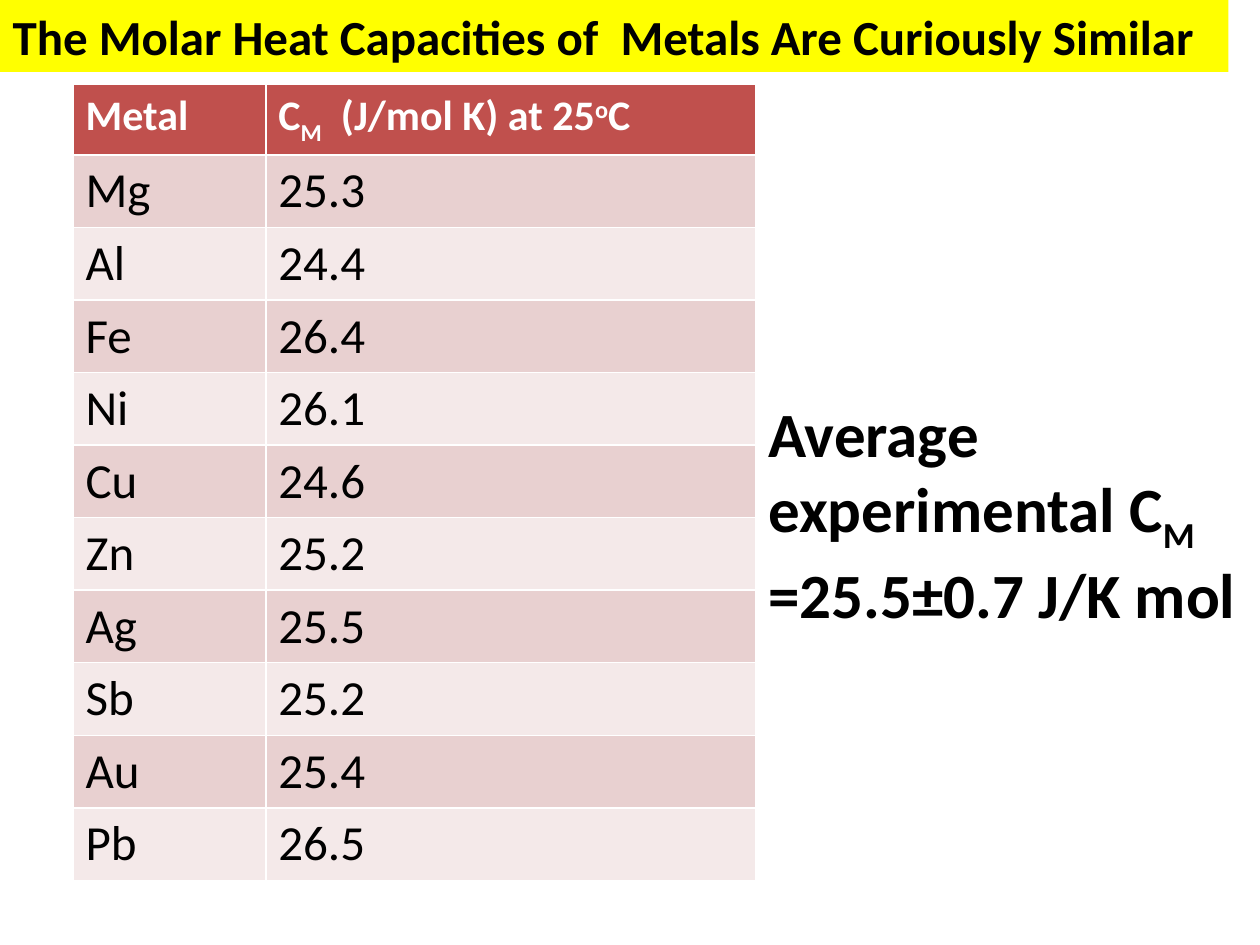
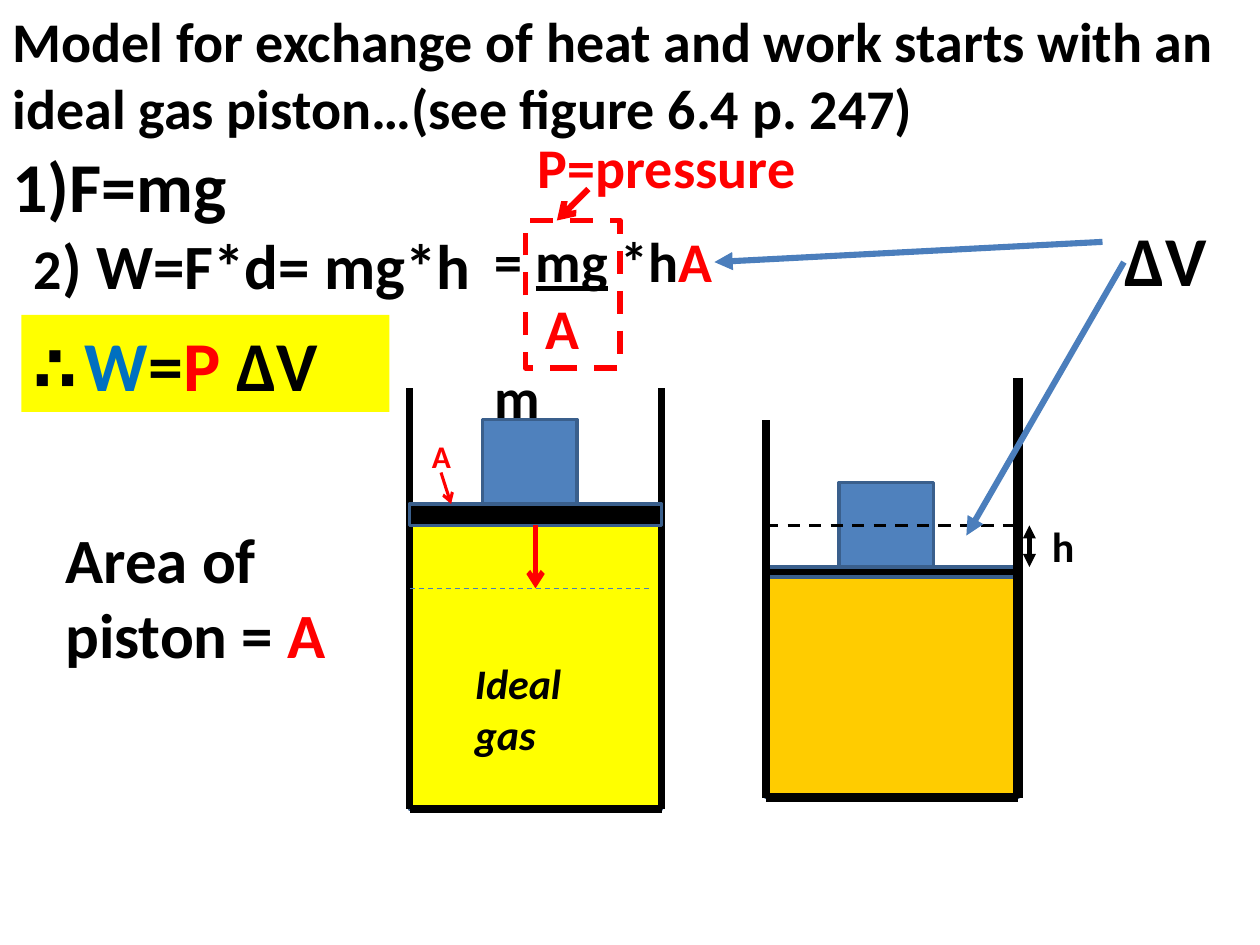
from dataclasses import dataclass

from pptx import Presentation
from pptx.dml.color import RGBColor
from pptx.enum.dml import MSO_LINE as Dash
from pptx.enum.shapes import MSO_CONNECTOR as Link, MSO_SHAPE as Form
from pptx.enum.text import MSO_ANCHOR as Anchor, MSO_AUTO_SIZE as Fit, PP_ALIGN as Align
from pptx.oxml.ns import qn
from pptx.util import Inches, Pt
from lxml.etree import SubElement


@dataclass(frozen=True)
class Theme:
    font: str = "Calibri"
    black: str = "000000"
    white: str = "FFFFFF"
    yellow: str = "FFFF00"
    amber: str = "FFCC00"
    red: str = "FF0000"
    sky: str = "0070C0"
    blue: str = "4F81BD"
    edge: str = "3A5F8C"
    arrow: str = "4B7EBC"
    head: str = "C0504D"
    bands: tuple = ("E8D0D0", "F4E9E9")
    tiny: int = 18
    small: int = 24
    mid: int = 28
    large: int = 32
    big: int = 36
    huge: int = 40


T = Theme()
RED = {"color": T.red}
SUB, SUP = {"base": -25}, {"base": 30}

# A line of text is a list of (words, run format) pairs.
HEAT_TITLE = "The Molar Heat Capacities of  Metals Are Curiously Similar"
HEADS = [
    [("Metal", {})],
    [("C", {}), ("M", SUB), ("  (J/mol K) at 25", {}), ("o", SUP), ("C", {})],
]
METALS = [
    ("Mg", "25.3"), ("Al", "24.4"), ("Fe", "26.4"), ("Ni", "26.1"), ("Cu", "24.6"),
    ("Zn", "25.2"), ("Ag", "25.5"), ("Sb", "25.2"), ("Au", "25.4"), ("Pb", "26.5"),
]
MEAN = [
    [("Average experimental C", {}), ("M", SUB)],
    [("=25.5±0.7 J/K mol", {})],
]
GAS_TITLE = ("Model for exchange of heat and work starts with an "
             "ideal gas piston…(see figure 6.4 p. 247)")
WORK = [("2", {"size": T.large}), (") W=F*d= mg*h", {})]
RATIO = [
    [("= ", {}), ("mg", {"under": True}), (" *h", {}), ("A", RED)],
    [("A", RED)],
]
AREA = [("Area of piston = ", {}), ("A", RED)]
RESULT = [("∴", {"size": T.big}), (" ", {"size": T.tiny, "bold": False}),
          ("W", {"color": T.sky}), ("=", {}), ("P ", RED), ("ΔV", {})]

# Box, lines, size, colour
LABELS = [
    ((3.67, 5.17, 1.08, 0.91), ["Ideal gas"], T.small, T.black),
    ((3.83, 2.83, 0.67, 0.64), ["m"], T.large, T.black),
    ((0.42, 4.08, 2.5, 1.31), [AREA], T.big, T.black),
    ((0, 1.08, 2.67, 0.77), ["1)F=mg"], T.huge, T.black),
    ((0.17, 1.75, 4.25, 0.71), [WORK], T.big, T.black),
    ((3.83, 1.75, 3.33, 1.18), RATIO, T.large, T.black),
    ((8.83, 1.67, 1.17, 0.77), ["ΔV"], T.huge, T.black),
    ((4.17, 1, 2.67, 0.64), ["P=pressure"], T.large, T.red),
    ((0.17, 2.5, 2.92, 0.77), [RESULT], T.huge, T.black),
    ((3.33, 3.42, 0.35, 0.4), ["A"], T.tiny, T.red),
    ((8.25, 4.08, 0.42, 0.5), ["h"], T.small, T.black),
]
# From, to, colour, width, ends
ARROWS = [
    ((4.25, 4.17), (4.25, 4.67), T.red, 3, {"tail": "arrow"}),
    ((4.67, 1.5), (4.42, 1.75), T.red, 3.5, {"tail": "arrow"}),
    ((3.5, 3.75), (3.58, 4), T.red, 1.75, {"tail": "arrow"}),
    ((5.67, 2.08), (8.75, 1.92), T.arrow, 3.5, {"head": "triangle"}),
    ((7.67, 4.25), (8.92, 2.08), T.arrow, 3.5, {"head": "triangle"}),
    ((8.17, 4.17), (8.17, 4.5), T.black, 2.5, {"head": "triangle", "tail": "triangle"}),
]
BORE = 2  # inner width of each cylinder


def rgb(code):
    return RGBColor.from_string(code)


def paint(item, code):
    item.fill.solid()
    item.fill.fore_color.rgb = rgb(code)


def write(frame, lines, size, color=T.black, bold=True):
    """Fill a text frame; each line is a string or a list of runs."""
    for i, line in enumerate(lines):
        para = frame.paragraphs[0] if i == 0 else frame.add_paragraph()
        para.alignment = Align.LEFT
        font = para.font
        font.name, font.size, font.bold = T.font, Pt(size), bold
        font.color.rgb = rgb(color)
        for words, style in [(line, {})] if isinstance(line, str) else line:
            run = para.add_run()
            run.text = words
            if "size" in style:
                run.font.size = Pt(style["size"])
            if "color" in style:
                run.font.color.rgb = rgb(style["color"])
            if "bold" in style:
                run.font.bold = style["bold"]
            if "under" in style:
                run.font.underline = True
            if "base" in style:
                run.font._element.set("baseline", str(style["base"] * 1000))


def place(item, box):
    item.left, item.top, item.width, item.height = map(Inches, box)


def start(deck, title, box, size):
    slide = deck.slides.add_slide(deck.slide_layouts[5])
    head = slide.shapes.title
    place(head, box)
    frame = head.text_frame
    frame.auto_size, frame.word_wrap = Fit.NONE, True
    frame.vertical_anchor = Anchor.TOP
    write(frame, [title], size)
    return slide


def label(slide, box, lines, size, color=T.black):
    item = slide.shapes.add_textbox(*map(Inches, box))
    item.text_frame.word_wrap = True
    write(item.text_frame, lines, size, color)
    return item


def block(slide, box, fill, edge=T.edge, width=2):
    item = slide.shapes.add_shape(Form.RECTANGLE, *map(Inches, box))
    item.shadow.inherit = False
    if fill:
        paint(item, fill)
    else:
        item.fill.background()
    item.line.color.rgb = rgb(edge)
    item.line.width = Pt(width)
    return item


def line(slide, a, b, color, width, ends=None, dash=False):
    item = slide.shapes.add_connector(Link.STRAIGHT, *map(Inches, a + b))
    item.line.color.rgb = rgb(color)
    item.line.width = Pt(width)
    if dash:
        item.line.dash_style = Dash.DASH
    for end, kind in (ends or {}).items():
        SubElement(item.line._get_or_add_ln(), qn(f"a:{end}End"), type=kind)
    SubElement(item._element.spPr, qn("a:effectLst"))


def lid(slide, x, y):
    """Draw the piston plate with the weight resting on it."""
    block(slide, (x, y, BORE, 0.17), T.black)
    block(slide, (x + 0.58, y - 0.67, 0.75, 0.67), T.blue)


def tank(slide, x, top, floor, fill, left, right, width):
    """Draw the gas, then the walls, which rise to left and right, and the floor."""
    end = x + BORE
    block(slide, (x, top, BORE, floor - top), fill)
    line(slide, (end, floor), (end, right), T.black, width)
    line(slide, (x, floor), (x, left), T.black, 4.25)
    line(slide, (x, floor), (end, floor), T.black, 5)


def heat(deck):
    slide = start(deck, HEAT_TITLE, (0, 0, 9.75, 0.57), T.mid)
    paint(slide.shapes.title, T.yellow)
    count = len(METALS) + 1
    grid = slide.shapes.add_table(
        count, 2, *map(Inches, (0.58, 0.67, 5.42, 6.17))).table
    for col, width in zip(grid.columns, (1.53, 3.89)):
        col.width = Inches(width)
    for i, row in enumerate([HEADS] + METALS):
        top = i == 0
        for cell, text in zip(grid.rows[i].cells, row):
            paint(cell, T.head if top else T.bands[(i - 1) % 2])
            write(cell.text_frame, [text], T.small if top else T.mid,
                  T.white if top else T.black, top)
    label(slide, (6, 3.08, 4, 1.92), MEAN, T.big)


def piston(deck):
    slide = start(deck, GAS_TITLE, (0, 0, 9.83, 1.18), T.large)
    tank(slide, 3.25, 4.17, 6.42, T.yellow, 3.08, 3.08, 4.25)
    lid(slide, 3.25, 4)
    lid(slide, 6.08, 4.5)
    tank(slide, 6.08, 4.58, 6.33, T.amber, 3.33, 3, 5.5)
    line(slide, (3.25, 4.67), (5.17, 4.67), T.arrow, 0.75, dash=True)
    line(slide, (6.08, 4.17), (8.08, 4.17), T.black, 1.75, dash=True)
    for box, lines, size, color in LABELS:
        item = label(slide, box, lines, size, color)
        paras = item.text_frame.paragraphs
        if lines is RATIO:
            paras[1]._p.get_or_add_pPr().set("marL", str(Inches(0.4)))
        elif lines == [RESULT]:
            paint(item, T.yellow)
        elif lines == ["Ideal gas"]:
            paras[0].font.italic = True
    frame = block(slide, (4.17, 1.75, 0.75, 1.17), None, T.red, 3.25)
    frame.line.dash_style = Dash.DASH
    for arrow in ARROWS:
        line(slide, *arrow)


def main():
    deck = Presentation()
    deck.slide_width, deck.slide_height = Inches(10), Inches(7.5)
    heat(deck)
    piston(deck)
    deck.save("out.pptx")


if __name__ == "__main__":
    main()
